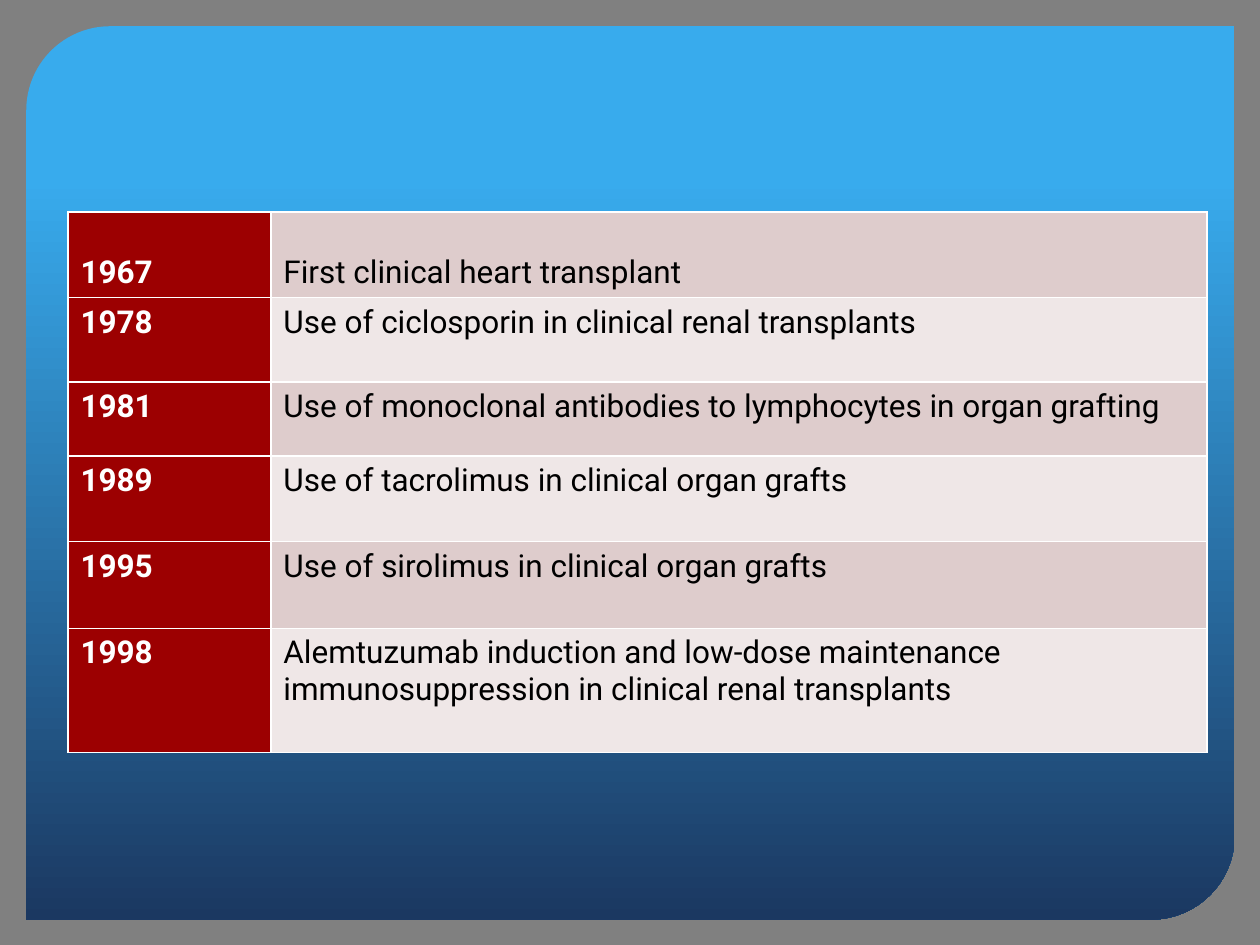
from dataclasses import dataclass

from lxml import etree
from pptx import Presentation
from pptx.dml.color import RGBColor
from pptx.enum import shapes, text
from pptx.oxml import ns
from pptx.util import Cm, Pt

GREY = RGBColor(0x80, 0x80, 0x80)
SKY = RGBColor(0x38, 0xAB, 0xED)
NAVY = RGBColor(0x1B, 0x38, 0x61)
RED = RGBColor(0x9C, 0x00, 0x01)
BANDS = (RGBColor(0xDE, 0xCC, 0xCC), RGBColor(0xEF, 0xE7, 0xE7))
WHITE = RGBColor(0xFF, 0xFF, 0xFF)
BLACK = RGBColor(0x00, 0x00, 0x00)


@dataclass
class Milestone:
    year: str
    event: str
    height: float
    anchor: text.MSO_ANCHOR = text.MSO_ANCHOR.TOP


MILESTONES = [
    Milestone("1967", "First clinical heart transplant", 1.73, text.MSO_ANCHOR.BOTTOM),
    Milestone("1978", "Use of ciclosporin in clinical renal transplants", 1.7),
    Milestone("1981", "Use of monoclonal antibodies to lymphocytes in organ grafting", 1.49),
    Milestone("1989", "Use of tacrolimus in clinical organ grafts", 1.73),
    Milestone("1995", "Use of sirolimus in clinical organ grafts", 1.75),
    Milestone("1998", "Alemtuzumab induction and low-dose maintenance "
              "immunosuppression in clinical renal transplants", 2.5),
]
COLUMN_WIDTHS = (4.09, 18.87)


def draw_panel(s) -> None:
    sp = s.shapes.add_shape(shapes.MSO_SHAPE.ROUND_2_DIAG_RECTANGLE,
                            Cm(0.53), Cm(0.53), Cm(24.36), Cm(18.01))
    sp.adjustments[0] = 0.094
    sp.shadow.inherit = False
    sp.line.fill.background()
    sp.fill.gradient()
    sp.fill.gradient_angle = 270
    for stop, position, color in zip(sp.fill.gradient_stops, (0.17, 1), (SKY, NAVY)):
        stop.position = position
        stop.color.rgb = color


def add_borders(cell, color: RGBColor, width: Pt) -> None:
    """Line all four sides; the lines must precede the cell's fill."""
    tc_pr = cell._tc.get_or_add_tcPr()
    for i, side in enumerate(("lnL", "lnR", "lnT", "lnB")):
        ln = etree.Element(ns.qn(f"a:{side}"), w=str(int(width)))
        fill = etree.SubElement(ln, ns.qn("a:solidFill"))
        etree.SubElement(fill, ns.qn("a:srgbClr"), val=str(color))
        tc_pr.insert(i, ln)


def fill_cell(cell, words: str, fill: RGBColor, color: RGBColor, bold: bool,
              anchor: text.MSO_ANCHOR) -> None:
    cell.fill.solid()
    cell.fill.fore_color.rgb = fill
    add_borders(cell, WHITE, Pt(1))
    cell.vertical_anchor = anchor
    r = cell.text_frame.paragraphs[0].add_run()
    r.text = words
    for name, value in {"name": "Roboto", "size": Pt(18), "bold": bold}.items():
        setattr(r.font, name, value)
    r.font.color.rgb = color


def draw_timeline(s, milestones: list[Milestone]) -> None:
    height = sum(m.height for m in milestones)
    table = s.shapes.add_table(len(milestones), len(COLUMN_WIDTHS), Cm(1.37), Cm(4.27),
                               Cm(sum(COLUMN_WIDTHS)), Cm(height)).table
    table.first_row = table.horz_banding = False
    for column, width in zip(table.columns, COLUMN_WIDTHS):
        column.width = Cm(width)
    for i, m in enumerate(milestones):
        table.rows[i].height = Cm(m.height)
        fill_cell(table.cell(i, 0), m.year, RED, WHITE, True, m.anchor)
        fill_cell(table.cell(i, 1), m.event, BANDS[i % 2], BLACK, False, m.anchor)


def main() -> None:
    prs = Presentation()
    prs.slide_width, prs.slide_height = Cm(25.4), Cm(19.05)
    s = prs.slides.add_slide(prs.slide_layouts[6])
    s.background.fill.solid()
    s.background.fill.fore_color.rgb = GREY
    draw_panel(s)
    draw_timeline(s, MILESTONES)
    prs.save("out.pptx")


if __name__ == "__main__":
    main()
